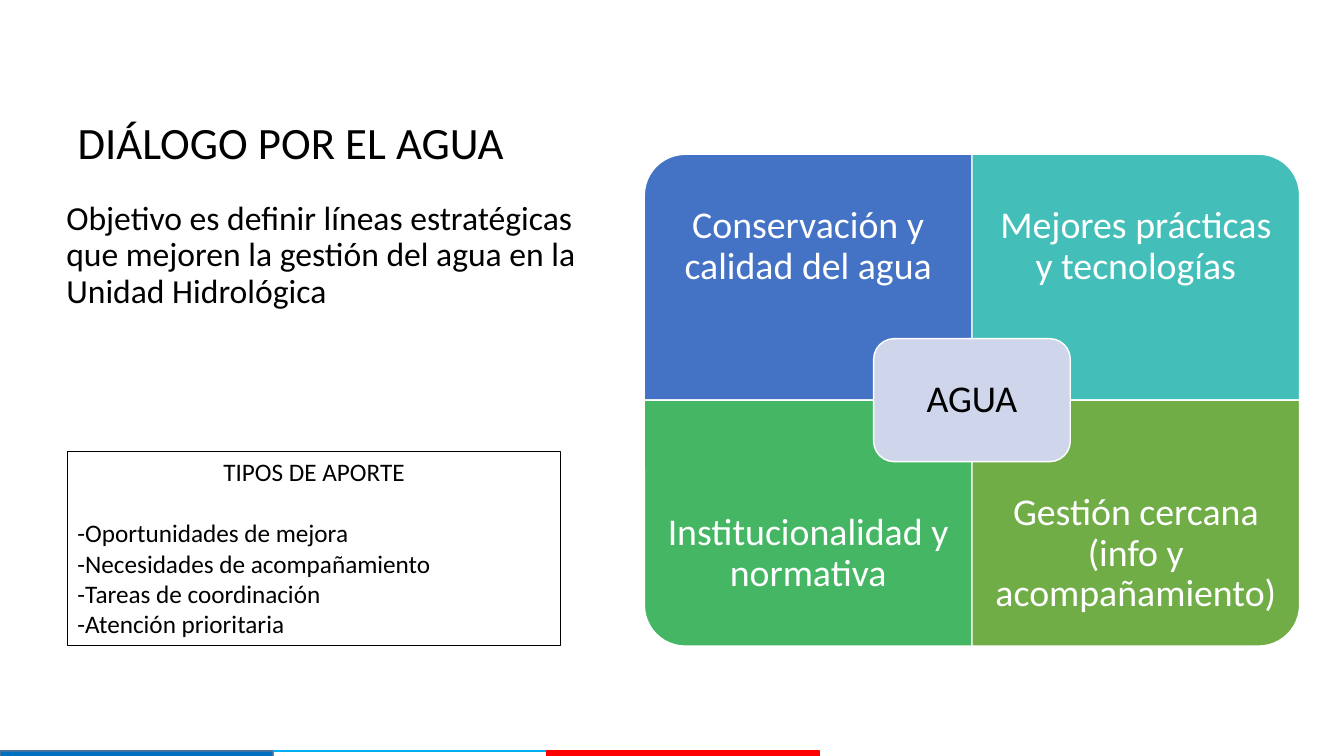
from pptx import Presentation
from pptx.dml.color import RGBColor
from pptx.enum.shapes import MSO_SHAPE
from pptx.enum.text import MSO_ANCHOR, PP_ALIGN
from pptx.util import Inches, Pt

RECT, ROUNDED, ROUND_ONE = (MSO_SHAPE.RECTANGLE, MSO_SHAPE.ROUNDED_RECTANGLE,
                            MSO_SHAPE.ROUND_1_RECTANGLE)
TOP, MIDDLE = MSO_ANCHOR.TOP, MSO_ANCHOR.MIDDLE
LEFT, CENTER = PP_ALIGN.LEFT, PP_ALIGN.CENTER

TITLE = "DIÁLOGO POR EL AGUA"
OBJECTIVE = ("Objetivo es definir líneas estratégicas que mejoren "
             "la gestión del agua en la Unidad Hidrológica")
TYPES_HEADING = "TIPOS DE APORTE"
TYPES = ["-Oportunidades de mejora", "-Necesidades de acompañamiento",
         "-Tareas de coordinación", "-Atención prioritaria"]
CORE = "AGUA"
# text, fill, column, row, rotation that turns the round corner outwards
QUADRANTS = [
    ("Conservación y calidad del agua", "4472C4", 0, 0, 270),
    ("Mejores prácticas y tecnologías", "43BEB9", 1, 0, 0),
    ("Institucionalidad y normativa", "45B664", 0, 1, 180),
    ("Gestión cercana (info y acompañamiento)", "70AD47", 1, 1, 90),
]
BARS = [("0070C0", "43739E"), ("FFFFFF", "00B0F0"), ("FF0000", "FF0000")]

GRID_X, GRID_Y, QUAD_W, QUAD_H = 6.39, 1.53, 3.25, 2.44
LABEL_H = QUAD_H * 0.75
CORE_W, CORE_H = QUAD_W * 0.6, QUAD_H / 2
BAR_W = 2.71

prs = Presentation()
prs.slide_width, prs.slide_height = Inches(13.33), Inches(7.5)
s = prs.slides.add_slide(prs.slide_layouts[5])


def rgb(value):
    return RGBColor.from_string(value)


def add_box(kind, x, y, w, h, fill=None, line="FFFFFF", width=1, rotation=0):
    sp = s.shapes.add_shape(kind, Inches(x), Inches(y), Inches(w), Inches(h))
    sp.shadow.inherit = False
    sp.rotation = rotation
    if fill:
        sp.fill.solid()
        sp.fill.fore_color.rgb = rgb(fill)
    else:
        sp.fill.background()
    sp.line.color.rgb = rgb(line)
    sp.line.width = Pt(width)
    return sp


def add_text_box(x, y, w, h):
    return s.shapes.add_textbox(Inches(x), Inches(y), Inches(w), Inches(h))


def write(sp, *lines, size, color="000000", align=LEFT, anchor=TOP,
          spacing=0.9, inset=None):
    tf = sp.text_frame
    tf.word_wrap = True
    tf.vertical_anchor = anchor
    if inset is not None:
        tf.margin_left = tf.margin_right = Inches(inset)
        tf.margin_top = tf.margin_bottom = Inches(inset)
    for i, line in enumerate(lines):
        p = tf.add_paragraph() if i else tf.paragraphs[0]
        p.alignment = align
        p.line_spacing = spacing
        r = p.add_run()
        r.text = line
        r.font.name = "Calibri"
        r.font.size = Pt(size)
        r.font.color.rgb = rgb(color)
    return tf


for i, (fill, line) in enumerate(BARS):
    add_box(RECT, i * BAR_W, 7.45, BAR_W, 0.07, fill, line)

title = s.shapes.title
title.left, title.top = Inches(0.67), Inches(1.07)
title.width, title.height = Inches(11.5), Inches(0.74)
write(title, TITLE, size=32, anchor=MIDDLE)

write(add_text_box(0.56, 1.95, 5.46, 4.07), OBJECTIVE, size=24)

types_box = add_box(RECT, 0.67, 4.48, 4.89, 1.92, line="000000", width=0.75)
tf = write(types_box, TYPES_HEADING, *TYPES, size=18, spacing=1.0)
heading = tf.paragraphs[0]
heading.alignment = CENTER
heading.space_after = Pt(22)

for text, fill, col, row, rotation in QUADRANTS:
    x, y = GRID_X + col * QUAD_W, GRID_Y + row * QUAD_H
    # a quarter turn swaps the sides around the same centre
    w, h = (QUAD_H, QUAD_W) if rotation % 180 else (QUAD_W, QUAD_H)
    add_box(ROUND_ONE, x + (QUAD_W - w) / 2, y + (QUAD_H - h) / 2, w, h,
            fill, rotation=rotation)
    label = add_text_box(x, y + row * (QUAD_H - LABEL_H), QUAD_W, LABEL_H)
    write(label, text, size=27, color="FFFFFF", align=CENTER, anchor=MIDDLE,
          inset=0.21)

core = add_box(ROUNDED, GRID_X + QUAD_W - CORE_W / 2,
               GRID_Y + QUAD_H - CORE_H / 2, CORE_W, CORE_H, "CFD5EA")
write(core, CORE, size=27, align=CENTER, anchor=MIDDLE, inset=0.11)

prs.save("out.pptx")
